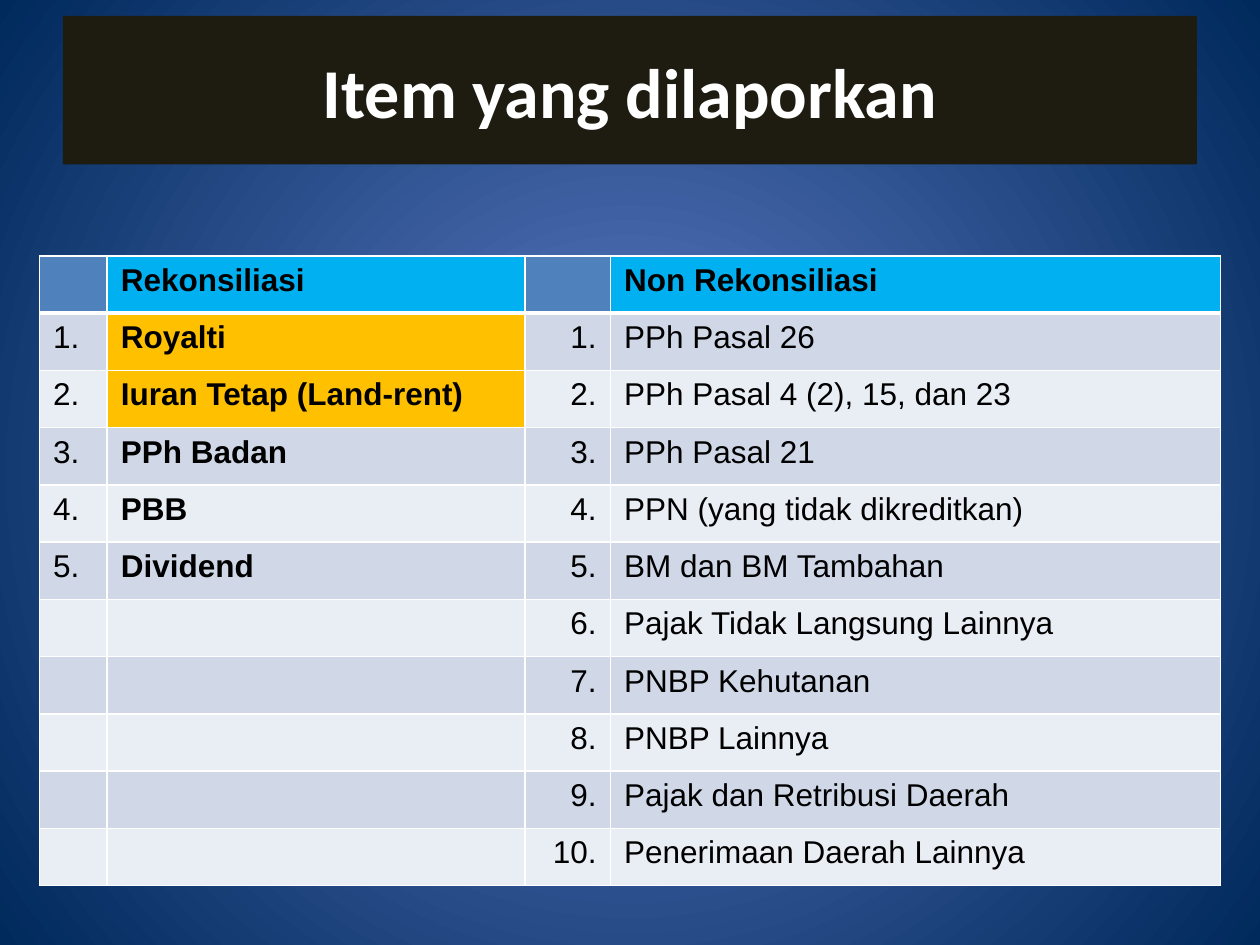
from itertools import zip_longest

from pptx import Presentation
from pptx.dml.color import RGBColor
from pptx.enum import shapes, text
from pptx.oxml import ns, parse_xml
from pptx.util import Pt

COLORS = {
    "glow": "5E7CC5", "navy": "00295C", "title": "1E1C11", "white": "FFFFFF",
    "black": "000000", "corner": "4F81BD", "header": "00B0F0",
    "highlight": "FFC000", "odd": "D0D8E8", "even": "E9EDF4",
}
RECONCILED = ["Royalti", "Iuran Tetap (Land-rent)", "PPh Badan", "PBB", "Dividend"]
UNRECONCILED = [
    "PPh Pasal 26", "PPh Pasal 4 (2), 15, dan 23", "PPh Pasal 21",
    "PPN (yang tidak dikreditkan)", "BM dan BM Tambahan",
    "Pajak Tidak Langsung Lainnya", "PNBP Kehutanan", "PNBP Lainnya",
    "Pajak dan Retribusi Daerah", "Penerimaan Daerah Lainnya",
]
COLUMN_WIDTHS = [38.7, 238.9, 48.7, 348.7]
HIGHLIGHTED_ROWS = (1, 2)


def rgb(name):
    """Return the named colour."""
    return RGBColor.from_string(COLORS[name])


def write(tf, words, color, align, **font):
    """Write one formatted run in a text frame."""
    p = tf.paragraphs[0]
    p.alignment = align
    r = p.add_run()
    r.text = words
    r.font.color.rgb = rgb(color)
    for name, value in font.items():
        setattr(r.font, name, value)


def paint_background(s):
    """Fill the slide with a radial gradient."""
    fill = s.background.fill
    fill.gradient()
    for stop, position, color in zip(fill.gradient_stops, (0, 1), ("glow", "navy")):
        stop.position = position
        stop.color.rgb = rgb(color)
    lin = s.element.find(".//" + ns.qn("a:lin"))
    radial = parse_xml(
        f'<a:path {ns.nsdecls("a")} path="circle">'
        '<a:fillToRect l="50000" t="50000" r="50000" b="50000"/></a:path>'
    )
    lin.getparent().replace(lin, radial)


def add_title(s, left, top, width, height):
    """Add the dark title band."""
    sp = s.shapes.add_shape(
        shapes.MSO_SHAPE.RECTANGLE, Pt(left), Pt(top), Pt(width), Pt(height))
    sp.shadow.inherit = False
    sp.fill.solid()
    sp.fill.fore_color.rgb = rgb("title")
    sp.line.fill.background()
    sp.text_frame.word_wrap = True
    sp.text_frame.vertical_anchor = text.MSO_ANCHOR.MIDDLE
    write(sp.text_frame, "Item yang dilaporkan", "white", text.PP_ALIGN.CENTER,
          name="Calibri", size=Pt(40), bold=True)


def add_borders(cell, row):
    """Draw white cell borders, heavier below the header."""
    heavy = {(0, "B"), (1, "T")}
    for side in "LRTB":
        width = Pt(3 if (row, side) in heavy else 1)
        cell._tc.get_or_add_tcPr().append(parse_xml(
            f'<a:ln{side} {ns.nsdecls("a")} w="{width}"><a:solidFill>'
            f'<a:srgbClr val="{COLORS["white"]}"/></a:solidFill></a:ln{side}>'
        ))


def cell_color(row, column):
    """Choose the fill name of a cell."""
    if row == 0:
        return "header" if column % 2 else "corner"
    if column == 1 and row in HIGHLIGHTED_ROWS:
        return "highlight"
    return "odd" if row % 2 else "even"


def table_rows():
    """Return the header and the numbered rows."""
    rows = [["", "Rekonsiliasi", "", "Non Rekonsiliasi"]]
    pairs = zip_longest(RECONCILED, UNRECONCILED, fillvalue="")
    for number, pair in enumerate(pairs, 1):
        rows.append([part for item in pair
                     for part in (f"{number}." if item else "", item)])
    return rows


def add_items_table(s, left, top, width, height):
    """Add the table of reported items."""
    rows = table_rows()
    table = s.shapes.add_table(
        len(rows), len(COLUMN_WIDTHS), Pt(left), Pt(top), Pt(width), Pt(height)).table
    for column, share in zip(table.columns, COLUMN_WIDTHS):
        column.width = Pt(width * share / sum(COLUMN_WIDTHS))
    margins = {"margin_left": 7.9, "margin_right": 7.9,
               "margin_top": 4, "margin_bottom": 4}
    for i, row in enumerate(rows):
        table.rows[i].height = Pt(height / len(rows))
        for j, words in enumerate(row):
            cell = table.cell(i, j)
            for name, value in margins.items():
                setattr(cell, name, Pt(value))
            add_borders(cell, i)
            cell.fill.solid()
            cell.fill.fore_color.rgb = rgb(cell_color(i, j))
            if words:
                align = text.PP_ALIGN.RIGHT if j == 2 else text.PP_ALIGN.LEFT
                write(cell.text_frame, words, "black", align,
                      name="Arial", size=Pt(18), bold=i == 0 or j == 1)


def main():
    """Build and save the slide."""
    prs = Presentation()
    prs.slide_width, prs.slide_height = Pt(720), Pt(540)
    s = prs.slides.add_slide(prs.slide_layouts[6])
    paint_background(s)
    add_title(s, 36, 9, 648, 85)
    add_items_table(s, 22.5, 146.25, 675, 360)
    prs.save("out.pptx")


if __name__ == "__main__":
    main()
